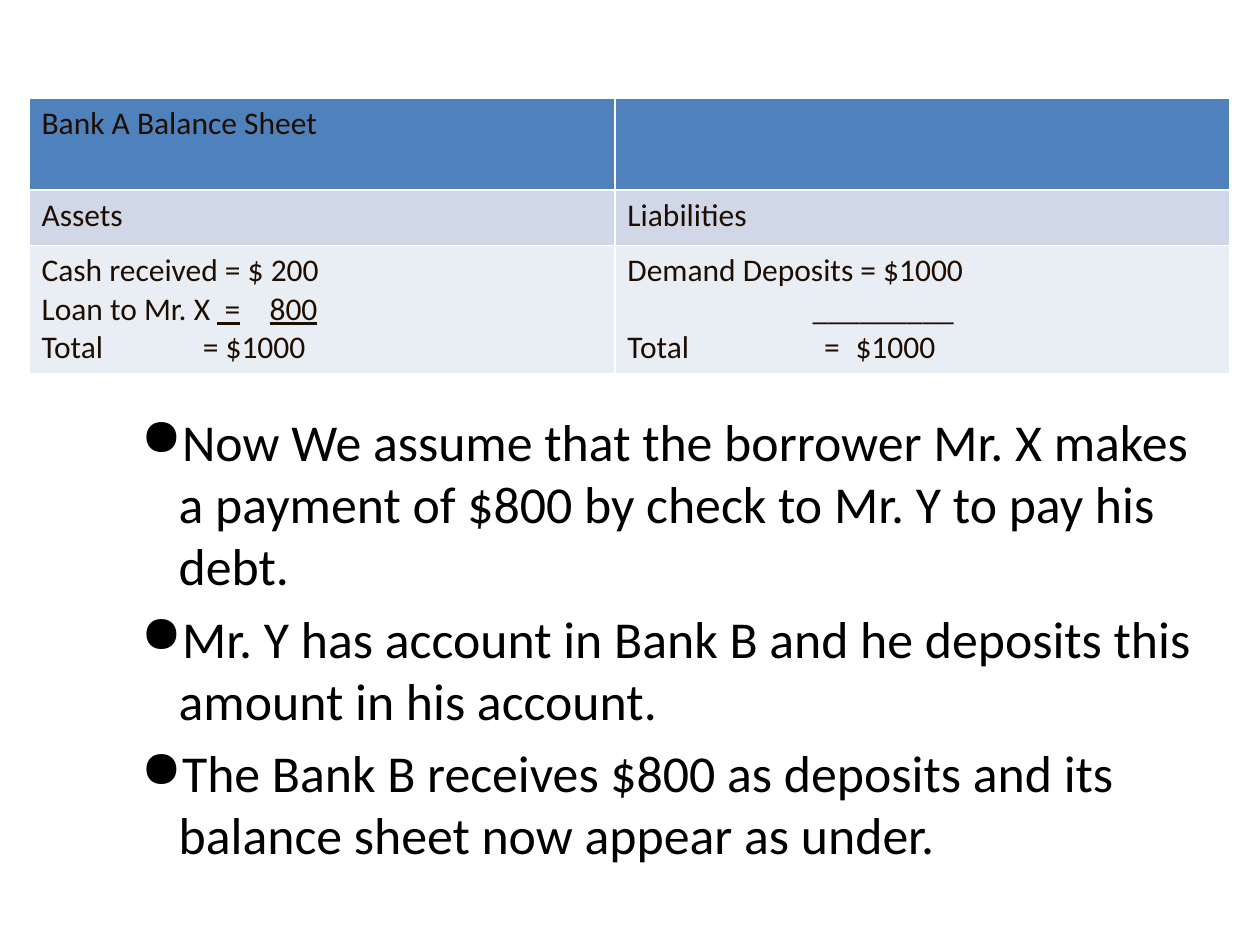
from dataclasses import dataclass

from lxml import etree
from pptx import Presentation
from pptx import util as u
from pptx.dml.color import RGBColor
from pptx.enum import text
from pptx.oxml import ns


@dataclass(frozen=True)
class Theme:
    font: str = "Calibri"
    table_ink: str = "1E0E01"
    body_ink: str = "000000"
    row_fills: tuple = ("4F81BD", "D0D8E8", "E9EDF4")
    table_size: float = 18
    body_size: float = 29.6


class SlideBuilder:
    def __init__(self, slide, theme):
        self.slide = slide
        self.theme = theme

    def add_run(self, paragraph, wording, size, color, underline=False):
        run = paragraph.add_run()
        run.text = wording
        font = run.font
        font.name = self.theme.font
        font.size = u.Pt(size)
        font.bold = False
        font.underline = underline
        font.color.rgb = RGBColor.from_string(color)

    def add_tabs(self, paragraph, stops):
        properties = paragraph._p.get_or_add_pPr()
        tab_list = etree.SubElement(properties, ns.qn("a:tabLst"))
        for stop in stops:
            etree.SubElement(tab_list, ns.qn("a:tab"), pos=str(u.Inches(stop)), algn="l")

    def fill_cell(self, cell, lines, fill, stops):
        cell.fill.solid()
        cell.fill.fore_color.rgb = RGBColor.from_string(fill)
        frame = cell.text_frame
        for index, runs in enumerate(lines):
            paragraph = frame.add_paragraph() if index else frame.paragraphs[0]
            if any("\t" in wording for wording, _ in runs):
                self.add_tabs(paragraph, stops)
            for wording, underline in runs:
                self.add_run(paragraph, wording, self.theme.table_size,
                             self.theme.table_ink, underline)

    def add_table(self, left, top, widths, heights, rows, column_stops):
        shape = self.slide.shapes.add_table(
            len(heights), len(widths), u.Inches(left), u.Inches(top),
            u.Inches(sum(widths)), u.Inches(sum(heights)))
        table = shape.table
        for column, width in zip(table.columns, widths):
            column.width = u.Inches(width)
        for row, height, fill, contents in zip(
                table.rows, heights, self.theme.row_fills, rows):
            row.height = u.Inches(height)
            for cell, lines, stops in zip(row.cells, contents, column_stops):
                self.fill_cell(cell, lines, fill, stops)

    def add_bullets(self, left, top, width, height, sentences, indent):
        shape = self.slide.shapes.add_textbox(
            u.Inches(left), u.Inches(top), u.Inches(width), u.Inches(height))
        frame = shape.text_frame
        frame.word_wrap = True
        frame.margin_right = u.Inches(0.05)
        frame.vertical_anchor = text.MSO_ANCHOR.TOP
        for index, sentence in enumerate(sentences):
            paragraph = frame.add_paragraph() if index else frame.paragraphs[0]
            paragraph.space_before = u.Pt(self.theme.body_size * 0.2)
            properties = paragraph._p.get_or_add_pPr()
            properties.set("marL", str(u.Inches(indent)))
            properties.set("indent", str(-u.Inches(indent)))
            etree.SubElement(properties, ns.qn("a:buChar"), char="●")
            self.add_run(paragraph, sentence, self.theme.body_size, self.theme.body_ink)


def main():
    presentation = Presentation()
    presentation.slide_width = u.Inches(10)
    presentation.slide_height = u.Inches(7.5)
    slide = presentation.slides.add_slide(presentation.slide_layouts[6])
    builder = SlideBuilder(slide, Theme())

    assets = [
        [("Cash received = $ 200", False)],
        [("Loan to Mr. X ", False), (" =\t800", True)],
        [("Total\t= $1000", False)],
    ]
    liabilities = [
        [("Demand Deposits = $1000", False)],
        [("\t_________", False)],
        [("Total\t\t=\t$1000", False)],
    ]
    balance_sheet = [
        ([[("Bank A Balance Sheet", False)]], []),
        ([[("Assets", False)]], [[("Liabilities", False)]]),
        (assets, liabilities),
    ]
    builder.add_table(0.23, 0.78, (4.65, 4.88), (0.73, 0.44, 1), balance_sheet,
                      ((1.28, 1.81), (1.47, 1.56, 1.81)))
    builder.add_bullets(1.02, 3.2, 8.5, 2.42, (
        "Now We assume that the borrower Mr. X makes a payment of $800 "
        "by check to Mr. Y to pay his debt.",
        "Mr. Y has account in Bank B and he deposits this amount in his account.",
        "The Bank B receives $800 as deposits and its balance sheet now appear as under.",
    ), 0.3)
    presentation.save("out.pptx")


if __name__ == "__main__":
    main()
